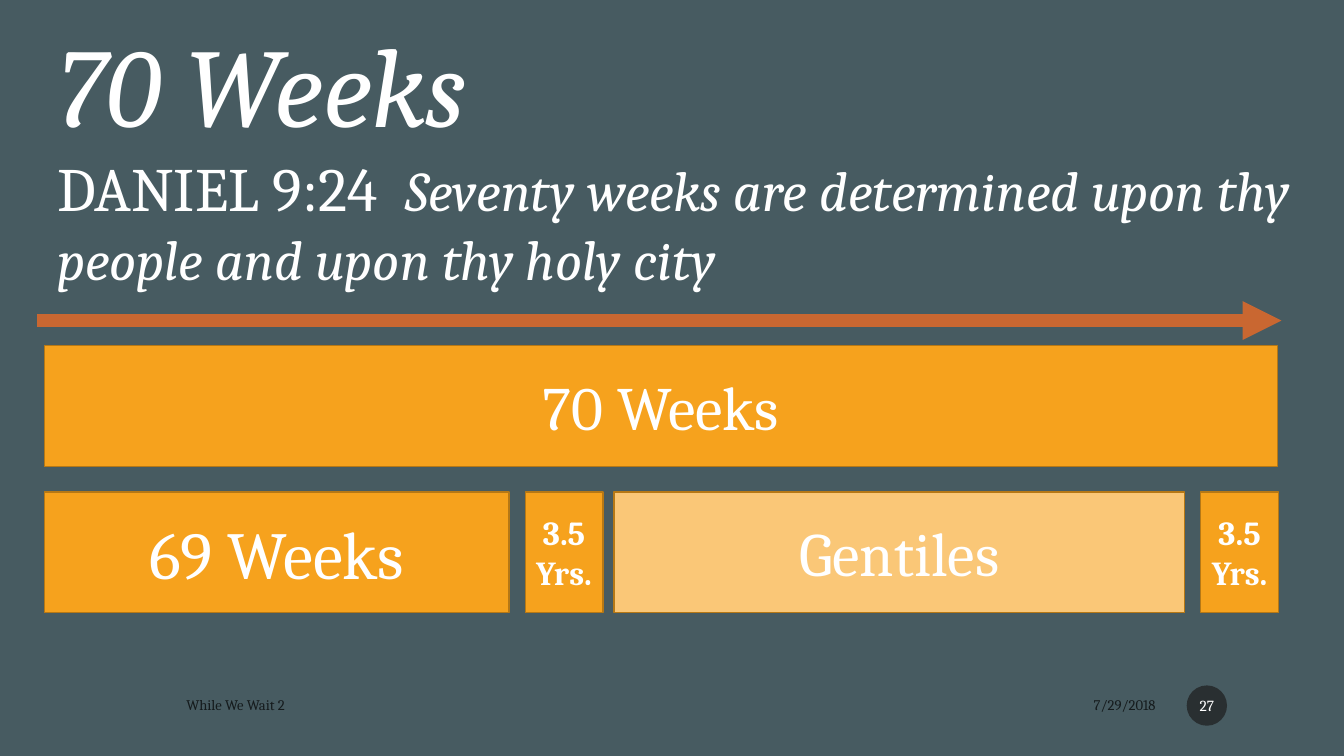
from pptx import Presentation
from pptx.dml.color import RGBColor
from pptx.enum.shapes import MSO_CONNECTOR as LINE, MSO_SHAPE as SHAPE
from pptx.enum.text import MSO_ANCHOR as ANCHOR, PP_ALIGN as ALIGN
from pptx.oxml.xmlchemy import OxmlElement as Node
from pptx.util import Inches, Pt

FONT = "Cambria"
WHITE, BLACK, DARK = "FFFFFF", "000000", "1D1D1D"
SLATE, GOLD, PALE, BROWN, RUST = "475B61", "F6A21D", "FAC777", "B67815", "C96731"
LEFT, HIGH = 0.44, 1.2


def paint(fill, color, alpha=None):
    """Make a fill solid; alpha is the opacity in percent."""
    fill.solid()
    fill.fore_color.rgb = RGBColor.from_string(color)
    if alpha:
        node = Node("a:alpha")
        node.set("val", str(alpha * 1000))
        fill._xPr.find(".//" + "{http://schemas.openxmlformats.org/drawingml/2006/main}srgbClr").append(node)


def add_run(para, text, size, color=WHITE, alpha=None, bold=False, italic=False):
    run = para.add_run()
    run.text = text
    font = run.font
    font.name, font.size = FONT, Pt(size)
    font.bold, font.italic = bold, italic
    paint(font.fill, color, alpha)


def add_box(slide, left, top, width, height):
    box = slide.shapes.add_textbox(*map(Inches, (left, top, width, height)))
    box.text_frame.word_wrap = True
    return box.text_frame


def add_foot(slide, text, left, width, align):
    frame = add_box(slide, left, 6.82, width, 0.35)
    frame.vertical_anchor = ANCHOR.MIDDLE
    para = frame.paragraphs[0]
    para.alignment = align
    add_run(para, text, 10.5, BLACK, 70)


def add_shape(slide, kind, spot, lines, size, fill, alpha=None, bold=False):
    """Add a filled shape with one centred paragraph per line."""
    shape = slide.shapes.add_shape(kind, *map(Inches, spot))
    shape.shadow.inherit = False
    paint(shape.fill, fill, alpha)
    frame = shape.text_frame
    frame.word_wrap = True
    frame.vertical_anchor = ANCHOR.MIDDLE
    for i, text in enumerate(lines):
        para = frame.add_paragraph() if i else frame.paragraphs[0]
        para.alignment = ALIGN.CENTER
        add_run(para, text, size, bold=bold)
    return shape


def add_bar(slide, left, top, width, lines, size, fill=GOLD, bold=False):
    spot = left, top, width, HIGH
    bar = add_shape(slide, SHAPE.RECTANGLE, spot, lines, size, fill, bold=bold)
    paint(bar.line.fill, BROWN)
    bar.line.width = Pt(1)


def add_page(slide, text):
    spot = 11.77, 6.8, 0.4, 0.4
    disc = add_shape(slide, SHAPE.OVAL, spot, [text], 11, DARK, 70)
    disc.line.fill.background()
    frame = disc.text_frame
    frame.margin_left = frame.margin_right = Inches(0.02)


def add_arrow(slide, left, right, top):
    ends = map(Inches, (left, top, right, top))
    arrow = slide.shapes.add_connector(LINE.STRAIGHT, *ends)
    paint(arrow.line.fill, RUST)
    arrow.line.width = Pt(9.25)
    tail = Node("a:tailEnd")
    tail.set("type", "triangle")
    arrow.line._get_or_add_ln().append(tail)
    arrow._element.spPr.append(Node("a:effectLst"))


def add_verse(slide):
    frame = add_box(slide, 0.47, 0.11, 12.78, 2.86)
    add_run(frame.paragraphs[0], "70 Weeks", 80, italic=True)
    para = frame.add_paragraph()
    add_run(para, "DANIEL 9:24  ", 44)
    add_run(para, "Seventy weeks are determined upon thy people and upon thy holy city",
            40, italic=True)


def main():
    deck = Presentation()
    deck.slide_width, deck.slide_height = Inches(13.33), Inches(7.5)
    slide = deck.slides.add_slide(deck.slide_layouts[6])
    paint(slide.background.fill, SLATE)
    add_foot(slide, "7/29/2018", 8.55, 3.01, ALIGN.RIGHT)
    add_foot(slide, "While We Wait 2", 1.75, 6.45, ALIGN.LEFT)
    add_page(slide, "27")
    add_arrow(slide, 0.37, 12.71, 3.18)
    add_verse(slide)
    add_bar(slide, LEFT, 3.43, 12.23, ["70 Weeks"], 44)
    row = 4.88
    add_bar(slide, LEFT, row, 4.61, ["69 Weeks"], 48)
    for left in (5.21, 11.91):
        add_bar(slide, left, row, 0.77, ["3.5", "Yrs."], 24, bold=True)
    add_bar(slide, 6.09, row, 5.66, ["Gentiles"], 44, PALE)
    deck.save("out.pptx")


if __name__ == "__main__":
    main()
